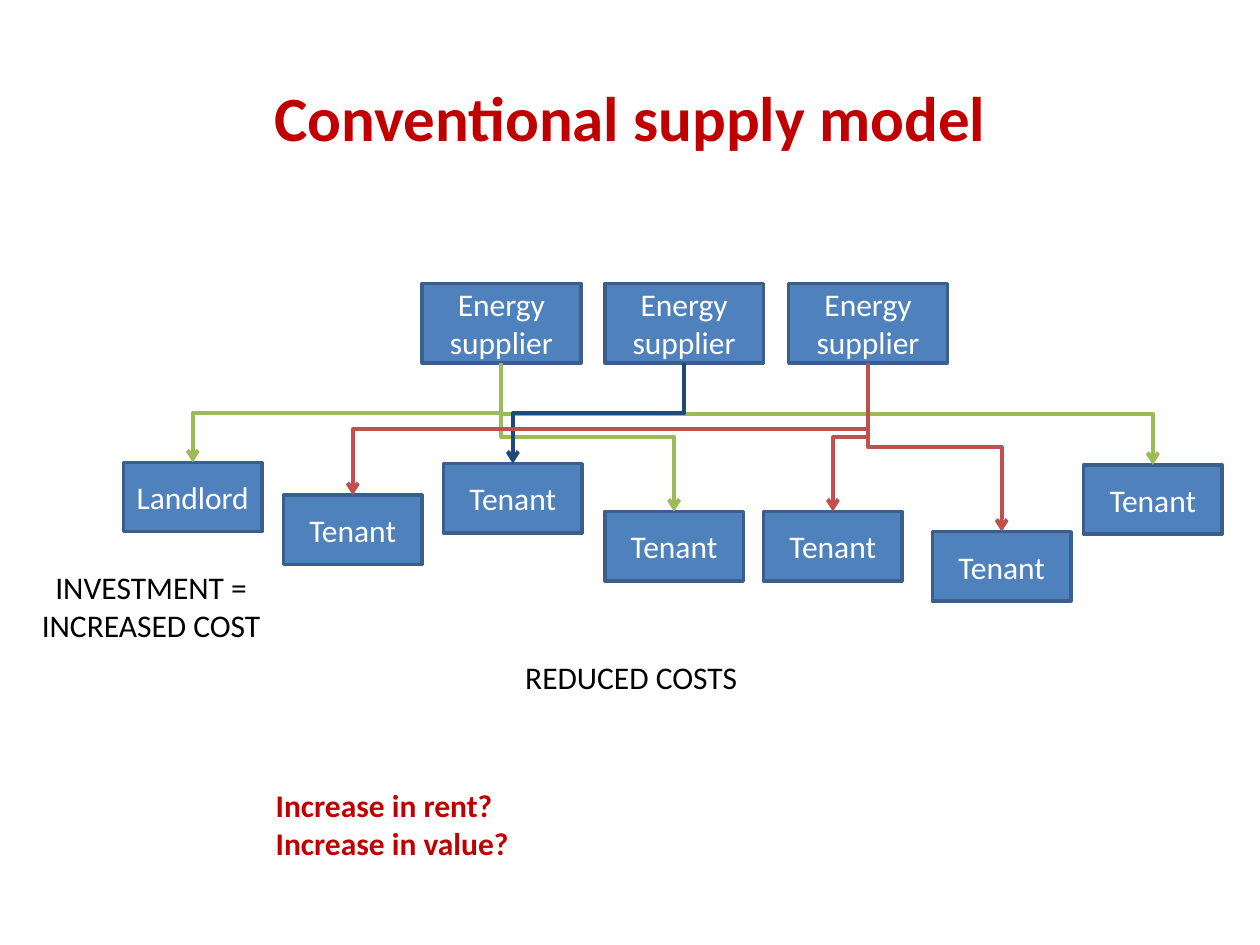
from lxml import etree
from pptx import Presentation
from pptx.dml.color import RGBColor
from pptx.enum.shapes import MSO_CONNECTOR, MSO_SHAPE
from pptx.enum.text import MSO_ANCHOR, MSO_AUTO_SIZE, PP_ALIGN
from pptx.oxml.ns import qn
from pptx.util import Inches, Pt

ELBOW, RECT = MSO_CONNECTOR.ELBOW, MSO_SHAPE.RECTANGLE
MIDDLE, FIT = MSO_ANCHOR.MIDDLE, MSO_AUTO_SIZE.SHAPE_TO_FIT_TEXT
LEFT, CENTER = PP_ALIGN.LEFT, PP_ALIGN.CENTER
BOTTOM_SITE, TOP_SITE = 2, 0

RED = RGBColor(0xC0, 0x00, 0x00)
BLACK = RGBColor(0x00, 0x00, 0x00)
WHITE = RGBColor(0xFF, 0xFF, 0xFF)
BOX_FILL = RGBColor(0x4F, 0x81, 0xBD)
BOX_LINE = RGBColor(0x3A, 0x5F, 0x8C)
GREEN = RGBColor(0x9B, 0xBB, 0x59)
NAVY = RGBColor(0x1F, 0x49, 0x7D)
ROSE = RGBColor(0xC0, 0x50, 0x4D)

SUPPLIER_SIZE = (1.26, 0.63)
SUPPLIER_TOP = 2.25
SUPPLIER_LEFTS = [3.35, 4.8, 6.26]
CUSTOMER_SIZE = (1.1, 0.55)
# Name, left, top, index of the supplier, line colour
CUSTOMERS = [
    ("Landlord", 0.98, 3.67, 0, GREEN),
    ("Tenant", 2.25, 3.93, 2, ROSE),
    ("Tenant", 3.52, 3.68, 1, NAVY),
    ("Tenant", 4.8, 4.06, 0, GREEN),
    ("Tenant", 6.06, 4.06, 2, ROSE),
    ("Tenant", 7.4, 4.22, 2, ROSE),
    ("Tenant", 8.6, 3.69, 0, GREEN),
]


def write(tf, lines, color, size=18, bold=False, align=CENTER):
    tf.text = "\n".join(lines)
    for p in tf.paragraphs:
        p.alignment = align
        p.font.name = "Calibri"
        p.font.size = Pt(size)
        p.font.bold = bold
        p.font.color.rgb = color


def add_title(s, text):
    title = s.shapes.title
    title.left, title.top = Inches(0.5), Inches(0.3)
    title.width, title.height = Inches(9), Inches(1.25)
    title.text_frame.vertical_anchor = MIDDLE
    write(title.text_frame, [text], RED, size=36, bold=True)


def add_box(s, text, left, top, size):
    sp = s.shapes.add_shape(RECT, *map(Inches, (left, top, *size)))
    sp.shadow.inherit = False
    sp.fill.solid()
    sp.fill.fore_color.rgb = BOX_FILL
    sp.line.color.rgb = BOX_LINE
    sp.line.width = Pt(2)
    sp.text_frame.vertical_anchor = MIDDLE
    write(sp.text_frame, [text], WHITE)
    return sp


def add_note(s, lines, box, color, wrap=False, **style):
    tf = s.shapes.add_textbox(*map(Inches, box)).text_frame
    tf.word_wrap = wrap
    tf.auto_size = FIT
    write(tf, lines, color, **style)


def add_supply_line(s, supplier, customer, color):
    """Elbow arrow that leaves the supplier downwards and enters the customer's top."""
    x1, y1 = supplier.left + supplier.width // 2, supplier.top + supplier.height
    x2, y2 = customer.left + customer.width // 2, customer.top
    line = s.shapes.add_connector(ELBOW, x1, y1, x2, y2)
    line.begin_connect(supplier, BOTTOM_SITE)
    line.end_connect(customer, TOP_SITE)

    # An elbow runs sideways first, so its frame is turned a quarter about its centre
    line.width, line.height = y2 - y1, abs(x2 - x1)
    line.left = (x1 + x2 - line.width) // 2
    line.top = (y1 + y2 - line.height) // 2
    sp_pr = line._element.spPr
    xfrm = sp_pr.find(qn("a:xfrm"))
    xfrm.rot = 270 if x2 > x1 else 90
    xfrm.flipH, xfrm.flipV = x2 > x1, False

    line.line.color.rgb = color
    line.line.width = Pt(2.25)
    etree.SubElement(sp_pr.find(qn("a:ln")), qn("a:tailEnd"), type="arrow")
    etree.SubElement(sp_pr, qn("a:effectLst"))


def main():
    prs = Presentation()
    prs.slide_width, prs.slide_height = Inches(10), Inches(7.5)
    s = prs.slides.add_slide(prs.slide_layouts[5])
    add_title(s, "Conventional supply model")

    suppliers = [add_box(s, "Energy supplier", left, SUPPLIER_TOP, SUPPLIER_SIZE)
                 for left in SUPPLIER_LEFTS]
    customers = [add_box(s, name, left, top, CUSTOMER_SIZE)
                 for name, left, top, _, _ in CUSTOMERS]
    links = [(source, customer, color)
             for customer, (_, _, _, source, color) in zip(customers, CUSTOMERS)]
    for source, customer, color in sorted(links, key=lambda link: link[0]):
        add_supply_line(s, suppliers[source], customer, color)

    add_note(s, ["INVESTMENT = INCREASED COST"], (0.17, 4.46, 2.06, 0.71), BLACK, wrap=True)
    add_note(s, ["REDUCED COSTS"], (4.07, 5.17, 1.9, 0.4), BLACK, align=LEFT)
    add_note(s, ["Increase in rent?", "Increase in value?"], (2.09, 6.19, 2.06, 0.71),
             RED, bold=True, align=LEFT)
    prs.save("out.pptx")


if __name__ == "__main__":
    main()
